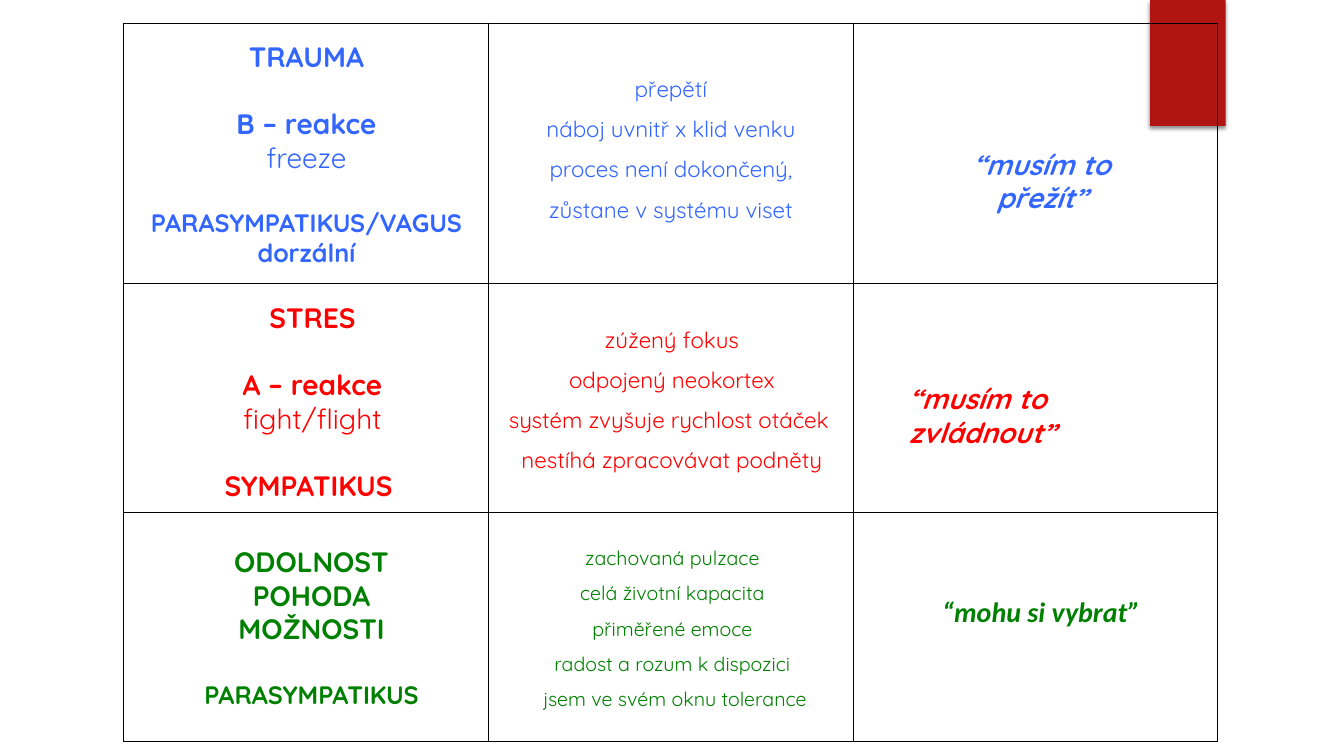
from lxml import etree
from pptx import Presentation
from pptx.dml.color import RGBColor
from pptx.enum.shapes import MSO_SHAPE
from pptx.enum.text import MSO_ANCHOR, MSO_AUTO_SIZE, PP_ALIGN
from pptx.oxml import parse_xml
from pptx.oxml.ns import qn
from pptx.util import Pt

CENTER, LEFT = PP_ALIGN.CENTER, PP_ALIGN.LEFT
TOP = MSO_ANCHOR.TOP
GROW = MSO_AUTO_SIZE.SHAPE_TO_FIT_TEXT
RECTANGLE = MSO_SHAPE.RECTANGLE
BLUE = RGBColor(0x33, 0x66, 0xFF)
RED = RGBColor(0xFF, 0x00, 0x00)
GREEN = RGBColor(0x00, 0x80, 0x00)
TAB_RED = RGBColor(0xB0, 0x15, 0x13)
MAIN_FONT = "Quicksand"
GAP = 24

SLIDE_SIZE = (960, 540)
TAB_AREA = (821.5, 0, 54, 90)
TABLE_CORNER = (88.5, 16.5)
COLUMN_WIDTH = 260.5
COLUMN_COUNT = 3
ROW_HEIGHTS = [186, 163.5, 163.5]

# rows is deliberately plain data
STATES = [
    {
        "color": BLUE,
        "title": ((97.2, 24.5, 243.4, 177), [
            ("TRAUMA", 20, True, 0),
            ("B – reakce", 20, True, GAP),
            ("freeze", 20, False, 0),
            ("PARASYMPATIKUS/VAGUS dorzální", 18, True, GAP),
        ]),
        "signs": ((373, 40.3, 212.4, 145.4), 16, [
            "přepětí",
            "náboj uvnitř x klid venku",
            "proces není dokončený, zůstane v systému viset",
        ]),
        "motto": ((658.8, 101.5, 170.6, 31.7), "“musím to přežít”", MAIN_FONT, CENTER),
    },
    {
        "color": RED,
        "title": ((137.5, 211, 171.4, 152.6), [
            ("STRES", 20, True, 0),
            ("A – reakce", 20, True, GAP),
            ("fight/flight", 20, False, 0),
            ("SYMPATIKUS ", 20, True, GAP),
        ]),
        "signs": ((355.7, 219.6, 248.4, 120.2), 16, [
            "zúžený fokus",
            "odpojený neokortex",
            "systém zvyšuje rychlost otáček ",
            "nestíhá zpracovávat podněty",
        ]),
        "motto": ((642.2, 269.3, 221.8, 31.7), "“musím to zvládnout”", MAIN_FONT, LEFT),
    },
    {
        "color": GREEN,
        "title": ((100.8, 385.4, 243.4, 126.5), [
            ("ODOLNOST", 20, True, 0),
            ("POHODA", 20, True, 0),
            ("MOŽNOSTI", 20, True, 0),
            ("PARASYMPATIKUS", 18, True, GAP),
        ]),
        "signs": ((358.6, 378, 243.4, 131), 14, [
            "zachovaná pulzace",
            "celá životní kapacita",
            "přiměřené emoce",
            "radost a rozum k dispozici",
            " jsem ve svém oknu tolerance",
        ]),
        "motto": ((632.9, 421.2, 221.8, 31.7), "“mohu si vybrat”", "Calibri", CENTER),
    },
]

DRAWING = "http://schemas.openxmlformats.org/drawingml/2006/main"
SHADOW = (
    f'<a:effectLst xmlns:a="{DRAWING}">'
    f'<a:outerShdw blurRad="{Pt(3)}" dist="{Pt(2)}" dir="5400000" rotWithShape="0">'
    '<a:srgbClr val="000000"><a:alpha val="45000"/></a:srgbClr>'
    "</a:outerShdw></a:effectLst>"
)


def points(values):
    return [Pt(value) for value in values]


def add_tab(page):
    tab = page.shapes.add_shape(RECTANGLE, *points(TAB_AREA))
    tab.fill.solid()
    tab.fill.fore_color.rgb = TAB_RED
    tab.line.fill.background()
    tab._element.spPr.append(parse_xml(SHADOW))


def style_cell(cell):
    cell.fill.background()
    properties = cell._tc.get_or_add_tcPr()
    for index, side in enumerate(("a:lnL", "a:lnR", "a:lnT", "a:lnB")):
        border = etree.Element(qn(side), w=str(Pt(1)))
        fill = etree.SubElement(border, qn("a:solidFill"))
        etree.SubElement(fill, qn("a:srgbClr"), val="000000")
        properties.insert(index, border)


def add_grid(page):
    width, height = COLUMN_WIDTH * COLUMN_COUNT, sum(ROW_HEIGHTS)
    frame = page.shapes.add_table(
        len(ROW_HEIGHTS), COLUMN_COUNT, *points((*TABLE_CORNER, width, height)))
    grid = frame.table
    grid.first_row = False
    grid.horz_banding = False
    for column in grid.columns:
        column.width = Pt(COLUMN_WIDTH)
    for row, row_height in zip(grid.rows, ROW_HEIGHTS):
        row.height = Pt(row_height)
        for cell in row.cells:
            style_cell(cell)


def add_text(page, area, lines, color, font=MAIN_FONT, align=CENTER,
             spacing=1.0, italic=False):
    box = page.shapes.add_textbox(*points(area))
    frame = box.text_frame
    frame.word_wrap = True
    frame.auto_size = GROW
    frame.vertical_anchor = TOP
    for index, (words, size, bold, before) in enumerate(lines):
        para = frame.add_paragraph() if index else frame.paragraphs[0]
        para.alignment = align
        para.line_spacing = spacing
        if before:
            para.space_before = Pt(before)
        span = para.add_run()
        span.text = words
        span.font.name = font
        span.font.size = Pt(size)
        span.font.bold = bold
        span.font.italic = italic
        span.font.color.rgb = color


def main():
    deck = Presentation()
    deck.slide_width, deck.slide_height = points(SLIDE_SIZE)
    page = deck.slides.add_slide(deck.slide_layouts[6])
    add_tab(page)
    add_grid(page)
    for state in STATES:
        color = state["color"]
        area, lines = state["title"]
        add_text(page, area, lines, color)
        area, size, signs = state["signs"]
        add_text(page, area, [(sign, size, False, 0) for sign in signs], color, spacing=1.5)
        area, motto, font, align = state["motto"]
        add_text(page, area, [(motto, 20, True, 0)], color, font, align, italic=True)
    deck.save("out.pptx")


if __name__ == "__main__":
    main()
